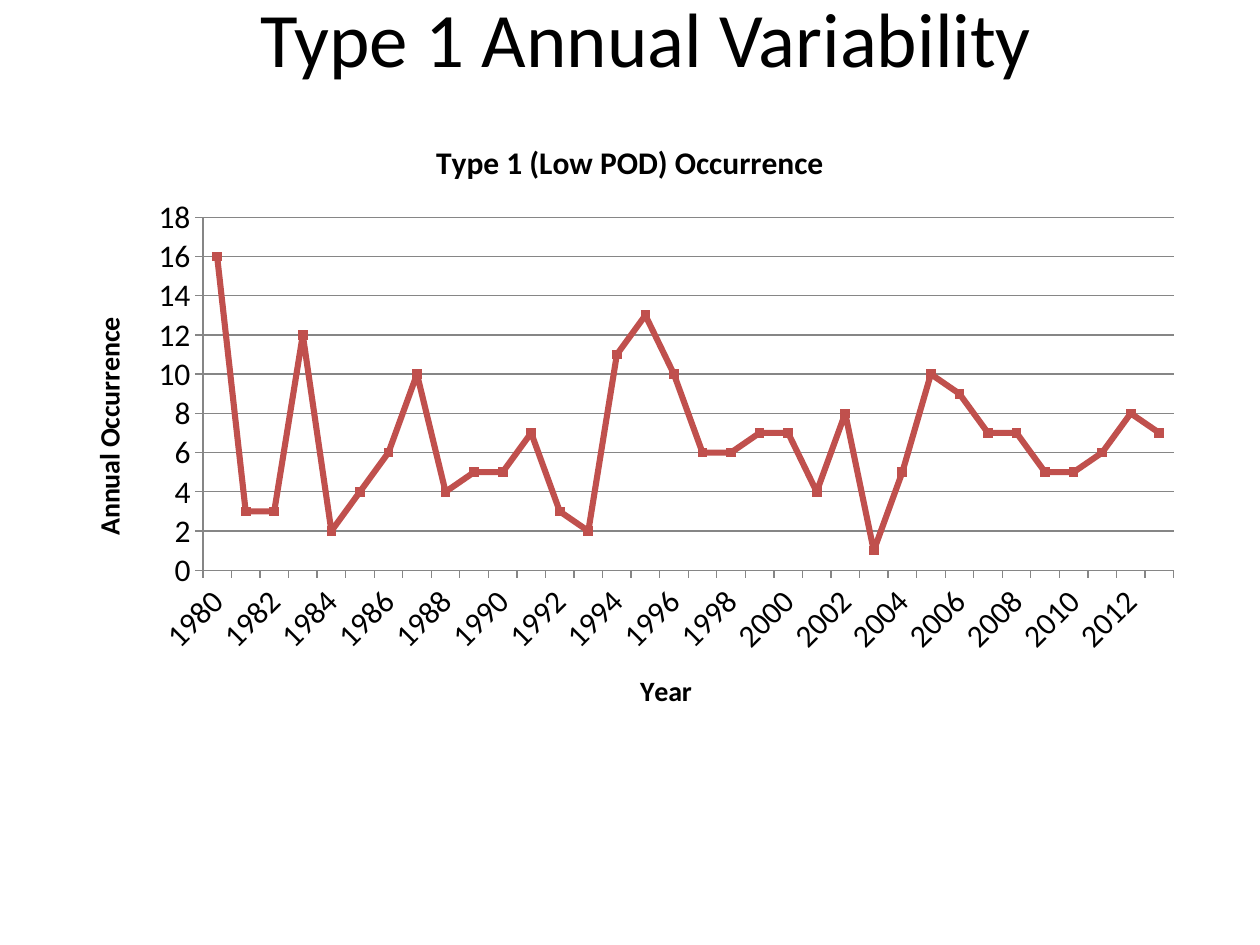
from dataclasses import dataclass

from lxml import etree
from pptx import Presentation
from pptx import util as u
from pptx.chart.data import CategoryChartData
from pptx.dml.color import RGBColor
from pptx.enum import chart as ch
from pptx.enum import text
from pptx.oxml import ns


@dataclass(frozen=True)
class Theme:
    font: str = "Calibri"
    ink: RGBColor = RGBColor(0, 0, 0)
    grid: RGBColor = RGBColor(0x86, 0x86, 0x86)
    series: RGBColor = RGBColor(0xC0, 0x50, 0x4D)
    title: int = 44
    chart_title: int = 18
    axis_title: int = 16
    tick: int = 18
    base: int = 10


@dataclass(frozen=True)
class Box:
    left: float
    top: float
    width: float
    height: float

    def cm(self) -> list[u.Cm]:
        return [u.Cm(v) for v in (self.left, self.top, self.width, self.height)]


@dataclass(frozen=True)
class AxisStyle:
    title: str
    gridlines: bool
    rotation: int


THEME = Theme()
TITLE_BOX = Box(2.97, -0.85, 20.12, 3.18)
CHART_BOX = Box(1.27, 2.33, 22.86, 12.57)
PLOT_BOX = Box(2.82, 2.05, 19.57, 7.12)  # measured from the chart's corner
YEAR_AXIS = AxisStyle("Year", False, -45)
COUNT_AXIS = AxisStyle("Annual Occurrence", True, 0)
FIRST_YEAR = 1980.0
OCCURRENCES = (16, 3, 3, 12, 2, 4, 6, 10, 4, 5, 5, 7, 3, 2, 11, 13, 10,
               6, 6, 7, 7, 4, 8, 1, 5, 10, 9, 7, 7, 5, 5, 6, 8, 7)


def style_font(font, size: int, bold: bool = False) -> None:
    font.name = THEME.font
    font.size = u.Pt(size)
    font.bold = bold
    font.color.rgb = THEME.ink


def write(tf, words: str, size: int, bold: bool = False) -> None:
    p = tf.paragraphs[0]
    p.alignment = text.PP_ALIGN.CENTER
    r = p.add_run()
    r.text = words
    style_font(r.font, size, bold)


def style_axis(axis, style: AxisStyle) -> None:
    write(axis.axis_title.text_frame, style.title, THEME.axis_title, True)
    axis.has_major_gridlines = style.gridlines
    axis.major_tick_mark = ch.XL_TICK_MARK.OUTSIDE
    axis.minor_tick_mark = ch.XL_TICK_MARK.NONE
    axis.tick_labels.number_format = "General"
    axis.tick_labels.number_format_is_linked = False
    style_font(axis.tick_labels.font, THEME.tick)
    lines = [axis.format.line]
    if style.gridlines:
        lines.append(axis.major_gridlines.format.line)
    for line in lines:
        line.color.rgb = THEME.grid
        line.width = u.Pt(0.75)
    if style.rotation:
        body = axis._element.find(ns.qn("c:txPr")).find(ns.qn("a:bodyPr"))
        body.set("rot", str(style.rotation * 60000))
        body.set("vert", "horz")


def place_plot(chart, plot: Box, frame: Box) -> None:
    """Fix the inner plot area as fractions of the chart frame."""
    area = chart._chartSpace.chart.plotArea
    for old in area.findall(ns.qn("c:layout")):
        area.remove(old)
    layout = etree.Element(ns.qn("c:layout"))
    manual = etree.SubElement(layout, ns.qn("c:manualLayout"))
    values = {"layoutTarget": "inner", "xMode": "edge", "yMode": "edge",
              "x": plot.left / frame.width, "y": plot.top / frame.height,
              "w": plot.width / frame.width, "h": plot.height / frame.height}
    for tag, value in values.items():
        etree.SubElement(manual, ns.qn(f"c:{tag}")).set("val", str(value))
    area.insert(0, layout)


def add_occurrence_chart(s) -> None:
    data = CategoryChartData()
    data.categories = [FIRST_YEAR + i for i in range(len(OCCURRENCES))]
    data.add_series("Series 1", OCCURRENCES)
    chart = s.shapes.add_chart(
        ch.XL_CHART_TYPE.LINE_MARKERS, *CHART_BOX.cm(), data).chart
    style_font(chart.font, THEME.base)
    chart.has_legend = False
    chart.has_title = True
    write(chart.chart_title.text_frame, "Type 1 (Low POD) Occurrence",
          THEME.chart_title, True)
    chart.chart_title.include_in_layout = False
    place_plot(chart, PLOT_BOX, CHART_BOX)

    # Axes: every second year is labelled
    style_axis(chart.category_axis, YEAR_AXIS)
    style_axis(chart.value_axis, COUNT_AXIS)
    chart.value_axis.minimum_scale = 0
    chart.value_axis.maximum_scale = 18
    chart.value_axis.major_unit = 2
    skip = etree.Element(ns.qn("c:tickLblSkip"))
    skip.set("val", "2")
    chart.category_axis._element.find(ns.qn("c:noMultiLvlLbl")).addprevious(skip)

    # Series line and markers
    chart.plots[0].vary_by_categories = False
    series = chart.plots[0].series[0]
    series.smooth = False
    series.format.line.color.rgb = THEME.series
    series.format.line.width = u.Pt(3.5)
    series.marker.style = ch.XL_MARKER_STYLE.SQUARE
    series.marker.size = 5
    series.marker.format.fill.solid()
    series.marker.format.fill.fore_color.rgb = THEME.series
    series.marker.format.line.color.rgb = THEME.series


def main() -> None:
    prs = Presentation()
    prs.slide_width, prs.slide_height = u.Cm(25.4), u.Cm(19.05)
    s = prs.slides.add_slide(prs.slide_layouts[5])

    # Slide title
    sp = s.shapes.title
    sp.left, sp.top, sp.width, sp.height = TITLE_BOX.cm()
    tf = sp.text_frame
    tf.vertical_anchor = text.MSO_ANCHOR.MIDDLE
    write(tf, "Type 1 Annual Variability", THEME.title)

    add_occurrence_chart(s)
    prs.save("out.pptx")


if __name__ == "__main__":
    main()
